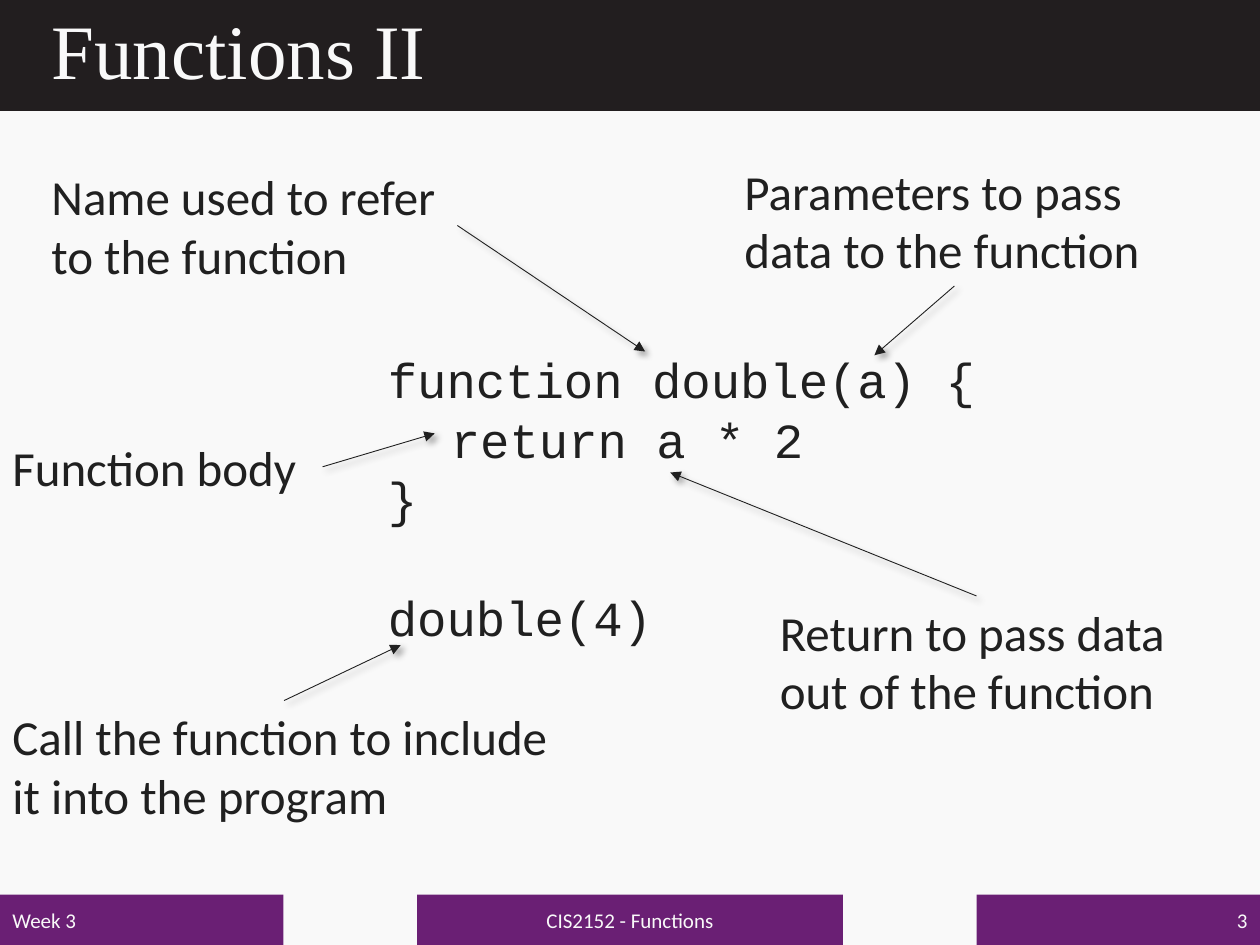
"""Build the slide that labels the parts of a function."""
from dataclasses import dataclass

from lxml import etree
from pptx import Presentation
from pptx.dml.color import RGBColor
from pptx.enum.shapes import MSO_CONNECTOR, MSO_SHAPE
from pptx.enum.text import MSO_ANCHOR, PP_ALIGN
from pptx.oxml import parse_xml
from pptx.oxml.ns import nsdecls, qn
from pptx.shapes.autoshape import Shape
from pptx.slide import Slide
from pptx.text.text import TextFrame
from pptx.util import Inches, Pt

RECTANGLE = MSO_SHAPE.RECTANGLE
STRAIGHT = MSO_CONNECTOR.STRAIGHT
TOP, MIDDLE = MSO_ANCHOR.TOP, MSO_ANCHOR.MIDDLE
LEFT, CENTER, RIGHT = PP_ALIGN.LEFT, PP_ALIGN.CENTER, PP_ALIGN.RIGHT
TOP_SIDE, BOTTOM_SIDE, RIGHT_SIDE = 0, 2, 3

COLORS = {
    "background": "F9F9F9",
    "header": "221E1F",
    "footer": "6A1F74",
    "text": "202020",
    "light": "F9F9F9",
}
SHADOW = (
    f'<a:effectLst {nsdecls("a")}><a:outerShdw blurRad="{Pt(4)}" dist="{Pt(3)}" '
    'dir="2700000" algn="tl" rotWithShape="0"><a:srgbClr val="000000">'
    '<a:alpha val="40000"/></a:srgbClr></a:outerShdw></a:effectLst>'
)
CODE_LINES = ["function double(a) {", "\treturn a * 2", "}", "double(4)"]
CODE_LINE_HEIGHT = Pt(34)


@dataclass
class Box:
    left: float
    top: float
    width: float
    height: float

    def lengths(self) -> list[int]:
        """Return the box as slide lengths."""
        return [Inches(value) for value in (self.left, self.top, self.width, self.height)]


@dataclass
class TextStyle:
    size: float
    font: str
    color: str
    align: PP_ALIGN = LEFT
    anchor: MSO_ANCHOR = TOP


@dataclass
class FooterPart:
    text: str
    left: float
    width: float
    align: PP_ALIGN


@dataclass
class Label:
    text: str
    box: Box
    side: int
    target: tuple[float, float]


TITLE_STYLE = TextStyle(44, "Times New Roman", "light", anchor=MIDDLE)
CODE_STYLE = TextStyle(28, "Courier New", "text")
LABEL_STYLE = TextStyle(28, "Calibri", "text")

FOOTER = [
    FooterPart("Week 3", 0, 2.25, LEFT),
    FooterPart("CIS2152 - Functions", 3.31, 3.38, CENTER),
    FooterPart("3", 7.75, 2.25, RIGHT),
]
LABELS = [
    Label("Name used to refer to the function",
          Box(0.31, 1.27, 3.32, 1.04), RIGHT_SIDE, (5.12, 2.79)),
    Label("Parameters to pass data to the function",
          Box(5.81, 1.23, 3.53, 1.04), BOTTOM_SIDE, (6.94, 2.82)),
    Label("Function body",
          Box(0, 3.42, 2.56, 0.57), RIGHT_SIDE, (3.45, 3.44)),
    Label("Return to pass data out of the function",
          Box(6.09, 4.73, 3.32, 1.04), TOP_SIDE, (5.32, 3.75)),
    Label("Call the function to include it into the program",
          Box(0, 5.56, 4.51, 1.04), TOP_SIDE, (3.18, 5.12)),
]


def color(name: str) -> RGBColor:
    """Look up a named colour."""
    return RGBColor.from_string(COLORS[name])


def write_lines(frame: TextFrame, lines: list[str], style: TextStyle) -> None:
    """Fill a text frame with one paragraph for each line."""
    frame.word_wrap = True
    frame.vertical_anchor = style.anchor
    frame.text = "\n".join(lines)
    for paragraph in frame.paragraphs:
        paragraph.alignment = style.align
        paragraph.font.size = Pt(style.size)
        paragraph.font.name = style.font
        paragraph.font.color.rgb = color(style.color)


def add_bar(slide: Slide, box: Box, fill: str) -> Shape:
    """Add a plain filled rectangle."""
    shape = slide.shapes.add_shape(RECTANGLE, *box.lengths())
    shape.shadow.inherit = False
    shape.fill.solid()
    shape.fill.fore_color.rgb = color(fill)
    shape.line.fill.background()
    return shape


def add_text(slide: Slide, box: Box, lines: list[str], style: TextStyle) -> Shape:
    """Add a wrapped text box."""
    shape = slide.shapes.add_textbox(*box.lengths())
    write_lines(shape.text_frame, lines, style)
    return shape


def add_code(slide: Slide) -> None:
    """Add the code sample with a gap before the call."""
    shape = add_text(slide, Box(2.98, 2.72, 4.95, 2.46), CODE_LINES, CODE_STYLE)
    paragraphs = shape.text_frame.paragraphs
    for paragraph in paragraphs:
        paragraph.line_spacing = CODE_LINE_HEIGHT
    paragraphs[-1].space_before = CODE_LINE_HEIGHT


def add_arrow(slide: Slide, source: Shape, side: int, target: tuple[float, float]) -> None:
    """Draw a shadowed arrow from a side of a label to a point."""
    end = [Inches(value) for value in target]
    connector = slide.shapes.add_connector(STRAIGHT, *end, *end)
    connector.begin_connect(source, side)
    connector.line.color.rgb = color("text")
    connector.line.width = Pt(0.5)
    properties = connector._element.spPr
    etree.SubElement(properties.find(qn("a:ln")), qn("a:tailEnd"), type="triangle")
    properties.append(parse_xml(SHADOW))


def main() -> None:
    """Build and save the presentation."""
    presentation = Presentation()
    presentation.slide_width = Inches(10)
    presentation.slide_height = Inches(7.5)
    slide = presentation.slides.add_slide(presentation.slide_layouts[6])
    slide.background.fill.solid()
    slide.background.fill.fore_color.rgb = color("background")

    add_bar(slide, Box(0, 0, 10, 0.88), "header")
    title = add_text(slide, Box(0.31, 0, 9.39, 0.86), ["Functions II"], TITLE_STYLE)
    title.text_frame.paragraphs[0].line_spacing = 0.9
    for part in FOOTER:
        bar = add_bar(slide, Box(part.left, 7.1, part.width, 0.4), "footer")
        style = TextStyle(12, "Calibri", "light", part.align, MIDDLE)
        write_lines(bar.text_frame, [part.text], style)

    add_code(slide)
    for label in LABELS:
        shape = add_text(slide, label.box, [label.text], LABEL_STYLE)
        add_arrow(slide, shape, label.side, label.target)
    presentation.save("out.pptx")


if __name__ == "__main__":
    main()
